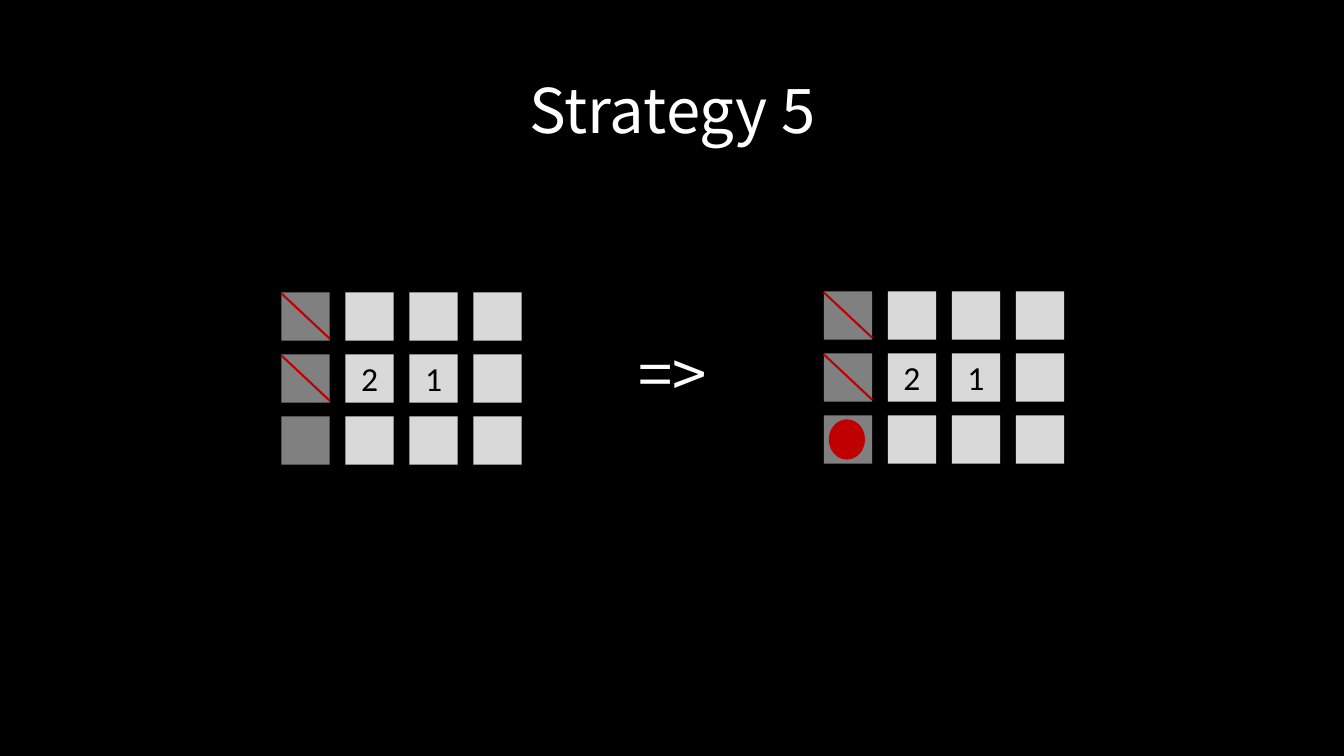
from dataclasses import dataclass

from lxml import etree
from pptx import Presentation
from pptx.dml.color import RGBColor
from pptx.enum import shapes, text
from pptx.oxml import ns
from pptx.util import Inches, Pt


@dataclass(frozen=True)
class Theme:
    background: str = "000000"
    heading: str = "FFFFFF"
    edge_cell: str = "808080"
    open_cell: str = "D9D9D9"
    digit: str = "000000"
    mark: str = "C00000"
    heading_font: str = "Noto Sans CJK KR"
    digit_font: str = "Calibri"
    heading_size: int = 44
    digit_size: int = 24
    strike_width: float = 1.5


CELL = 0.48
COLUMN_STEP, ROW_STEP = 0.635, 0.615
ROWS, COLUMNS = 3, 4
CLUES = {(1, 1): "2", (1, 2): "1"}
STRUCK_ROWS = (0, 1)


class StrategySlide:
    def __init__(self, deck, theme):
        self.theme = theme
        self.slide = deck.slides.add_slide(deck.slide_layouts[5])
        self.paint(self.slide.background.fill, theme.background)

    def paint(self, fill, color):
        fill.solid()
        fill.fore_color.rgb = RGBColor.from_string(color)

    def set_text(self, frame, wording, font, size, color, spacing=None):
        frame.word_wrap = True
        frame.vertical_anchor = text.MSO_ANCHOR.MIDDLE
        paragraph = frame.paragraphs[0]
        paragraph.alignment = text.PP_ALIGN.CENTER
        paragraph.line_spacing = spacing
        run = paragraph.add_run()
        run.text = wording
        run.font.name, run.font.size = font, Pt(size)
        run.font.color.rgb = RGBColor.from_string(color)

    def heading(self, holder, wording):
        t = self.theme
        self.set_text(holder.text_frame, wording, t.heading_font,
                      t.heading_size, t.heading, 0.9)

    def title(self, wording, left, top, width, height):
        title = self.slide.shapes.title
        title.left, title.top = Inches(left), Inches(top)
        title.width, title.height = Inches(width), Inches(height)
        self.heading(title, wording)

    def symbol(self, wording, left, top, width, height):
        box = self.slide.shapes.add_textbox(
            Inches(left), Inches(top), Inches(width), Inches(height))
        self.heading(box, wording)

    def tile(self, group, kind, left, top, width, height, color):
        tile = group.shapes.add_shape(
            kind, Inches(left), Inches(top), Inches(width), Inches(height))
        tile.shadow.inherit = False
        self.paint(tile.fill, color)
        tile.line.fill.background()
        return tile

    def strike(self, left, top):
        strike = self.slide.shapes.add_connector(
            shapes.MSO_CONNECTOR.STRAIGHT,
            Inches(left + CELL), Inches(top + 0.46),
            Inches(left), Inches(top + 0.01))
        strike.line.color.rgb = RGBColor.from_string(self.theme.mark)
        strike.line.width = Pt(self.theme.strike_width)
        etree.SubElement(strike._element.spPr, ns.qn("a:effectLst"))

    def board(self, left, top, mine_row=None):
        t = self.theme
        group = self.slide.shapes.add_group_shape()
        # Cells and clues
        for row in range(ROWS):
            for column in range(COLUMNS):
                cell = self.tile(
                    group, shapes.MSO_SHAPE.RECTANGLE,
                    left + column * COLUMN_STEP, top + row * ROW_STEP,
                    CELL, CELL, t.open_cell if column else t.edge_cell)
                if (row, column) in CLUES:
                    self.set_text(cell.text_frame, CLUES[row, column],
                                  t.digit_font, t.digit_size, t.digit)
        # Mine
        if mine_row is not None:
            self.tile(group, shapes.MSO_SHAPE.OVAL, left + 0.05,
                      top + mine_row * ROW_STEP + 0.04, 0.36, 0.4, t.mark)
        # Ruled-out cells
        for row in STRUCK_ROWS:
            self.strike(left, top + row * ROW_STEP)


def main():
    deck = Presentation()
    deck.slide_width, deck.slide_height = Inches(13.33), Inches(7.5)
    strategy = StrategySlide(deck, Theme())

    # Heading
    strategy.title("Strategy 5", 0.92, 0.4, 11.5, 1.45)

    # Position before and after the deduction
    strategy.symbol("=>", 5.97, 3.02, 1.41, 1.45)
    strategy.board(2.79, 2.9)
    strategy.board(8.17, 2.89, mine_row=2)

    deck.save("out.pptx")


if __name__ == "__main__":
    main()
